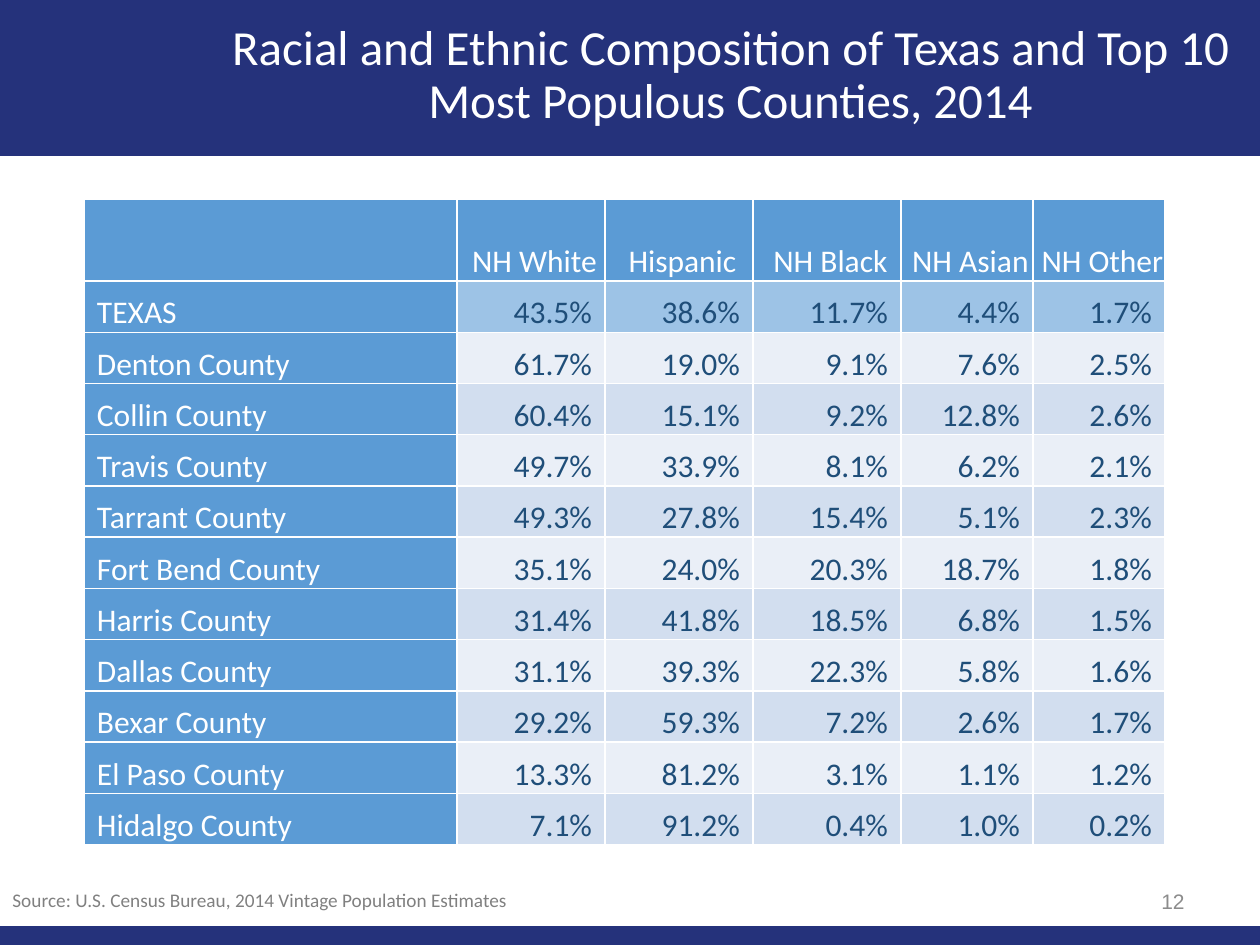
from lxml.etree import SubElement
from pptx import Presentation
from pptx.dml.color import RGBColor
from pptx.enum.shapes import MSO_SHAPE
from pptx.enum.text import MSO_ANCHOR, PP_ALIGN
from pptx.oxml.ns import qn
from pptx.util import Emu, Pt

TITLE = "Racial and Ethnic Composition of Texas and Top 10 Most Populous Counties, 2014"
SOURCE = "Source: U.S. Census Bureau, 2014 Vintage Population Estimates"
PAGE = "12"
GROUPS = [" NH White", " Hispanic", " NH Black", " NH Asian", " NH Other"]
SHARES = [
    ("TEXAS", 43.5, 38.6, 11.7, 4.4, 1.7),
    ("Denton County", 61.7, 19.0, 9.1, 7.6, 2.5),
    ("Collin County", 60.4, 15.1, 9.2, 12.8, 2.6),
    ("Travis County", 49.7, 33.9, 8.1, 6.2, 2.1),
    ("Tarrant County", 49.3, 27.8, 15.4, 5.1, 2.3),
    ("Fort Bend County", 35.1, 24.0, 20.3, 18.7, 1.8),
    ("Harris County", 31.4, 41.8, 18.5, 6.8, 1.5),
    ("Dallas County", 31.1, 39.3, 22.3, 5.8, 1.6),
    ("Bexar County", 29.2, 59.3, 7.2, 2.6, 1.7),
    ("El Paso County", 13.3, 81.2, 3.1, 1.1, 1.2),
    ("Hidalgo County", 7.1, 91.2, 0.4, 1.0, 0.2),
]

NAVY, WHITE, INK = "25327B", "FFFFFF", "1F4E79"
HEAD, STATE, BANDS = "5B9BD5", "9DC3E6", ("D2DEEF", "EAEFF7")
W, H = 1260, 945
TABLE_X, TABLE_Y, TABLE_H, HEAD_H = 84, 199, 646, 82
COLS = [373, 148, 148, 148, 132, 132]
PAD, WIDE_PAD = 1, 13


def px(n):
    return Emu(round(n * 914400 / 126))


def rgb(color):
    return RGBColor.from_string(color)


def add_text(p, text, size, color, align=PP_ALIGN.LEFT, font="Calibri"):
    p.alignment = align
    r = p.add_run()
    r.text = text
    r.font.name, r.font.size, r.font.bold = font, Pt(size), False
    r.font.color.rgb = rgb(color)


def add_bar(s, y, h):
    sp = s.shapes.add_shape(MSO_SHAPE.RECTANGLE, 0, px(y), px(W), px(h))
    sp.shadow.inherit = False
    sp.fill.solid()
    sp.fill.fore_color.rgb = rgb(NAVY)
    sp.line.fill.background()


def add_label(s, box, anchor, *text):
    tf = s.shapes.add_textbox(*map(px, box)).text_frame
    tf.word_wrap = True
    tf.vertical_anchor = anchor
    add_text(tf.paragraphs[0], *text)


def style_cell(cell, fill, right_pad):
    cell.vertical_anchor = MSO_ANCHOR.BOTTOM
    cell.margin_left = cell.margin_top = px(PAD)
    cell.margin_right, cell.margin_bottom = px(right_pad), 0
    tcPr = cell._tc.get_or_add_tcPr()
    for side in "LRTB":
        ln = SubElement(tcPr, qn(f"a:ln{side}"), w=str(Pt(1)))
        SubElement(SubElement(ln, qn("a:solidFill")), qn("a:srgbClr"), val=WHITE)
    cell.fill.solid()
    cell.fill.fore_color.rgb = rgb(fill)


def add_shares_table(s):
    frame = s.shapes.add_table(len(SHARES) + 1, len(COLS), px(TABLE_X), px(TABLE_Y),
                               px(sum(COLS)), px(TABLE_H))
    table = frame.table
    for col, w in zip(table.columns, COLS):
        col.width = px(w)
    for i, row in enumerate(table.rows):
        row.height = px((TABLE_H - HEAD_H) / len(SHARES) if i else HEAD_H)

    style_cell(table.cell(0, 0), HEAD, PAD)
    for j, group in enumerate(GROUPS, 1):
        cell = table.cell(0, j)
        style_cell(cell, HEAD, PAD)
        add_text(cell.text_frame.paragraphs[0], group, 18, WHITE, PP_ALIGN.CENTER)

    for i, (place, *shares) in enumerate(SHARES, 1):
        cell = table.cell(i, 0)
        style_cell(cell, HEAD, PAD)
        p = cell.text_frame.paragraphs[0]
        p._p.get_or_add_pPr().set("marL", str(px(WIDE_PAD - PAD)))
        add_text(p, place, 18, WHITE)
        for j, share in enumerate(shares, 1):
            cell = table.cell(i, j)
            style_cell(cell, STATE if i == 1 else BANDS[(i + 1) % 2], WIDE_PAD)
            add_text(cell.text_frame.paragraphs[0], f"{share:.1f}%", 18, INK, PP_ALIGN.RIGHT)


def main():
    prs = Presentation()
    prs.slide_width, prs.slide_height = px(W), px(H)
    s = prs.slides.add_slide(prs.slide_layouts[5])
    title = s.shapes.title
    add_bar(s, 0, 156)
    add_bar(s, 926, 19)
    s.shapes._spTree.append(title._element)

    title.left, title.top, title.width, title.height = map(px, (214, 13, 1033, 126))
    tf = title.text_frame
    tf.word_wrap = True
    tf.vertical_anchor = MSO_ANCHOR.MIDDLE
    p = tf.paragraphs[0]
    p.line_spacing = 0.9
    add_text(p, TITLE, 28, WHITE, PP_ALIGN.CENTER)

    add_shares_table(s)
    add_label(s, (0, 882, 1102, 36), MSO_ANCHOR.TOP, SOURCE, 11, "808080")
    add_label(s, (903, 876, 294, 50), MSO_ANCHOR.MIDDLE, PAGE, 12, "8C8C8C",
              PP_ALIGN.RIGHT, "Arial")
    prs.save("out.pptx")


if __name__ == "__main__":
    main()
